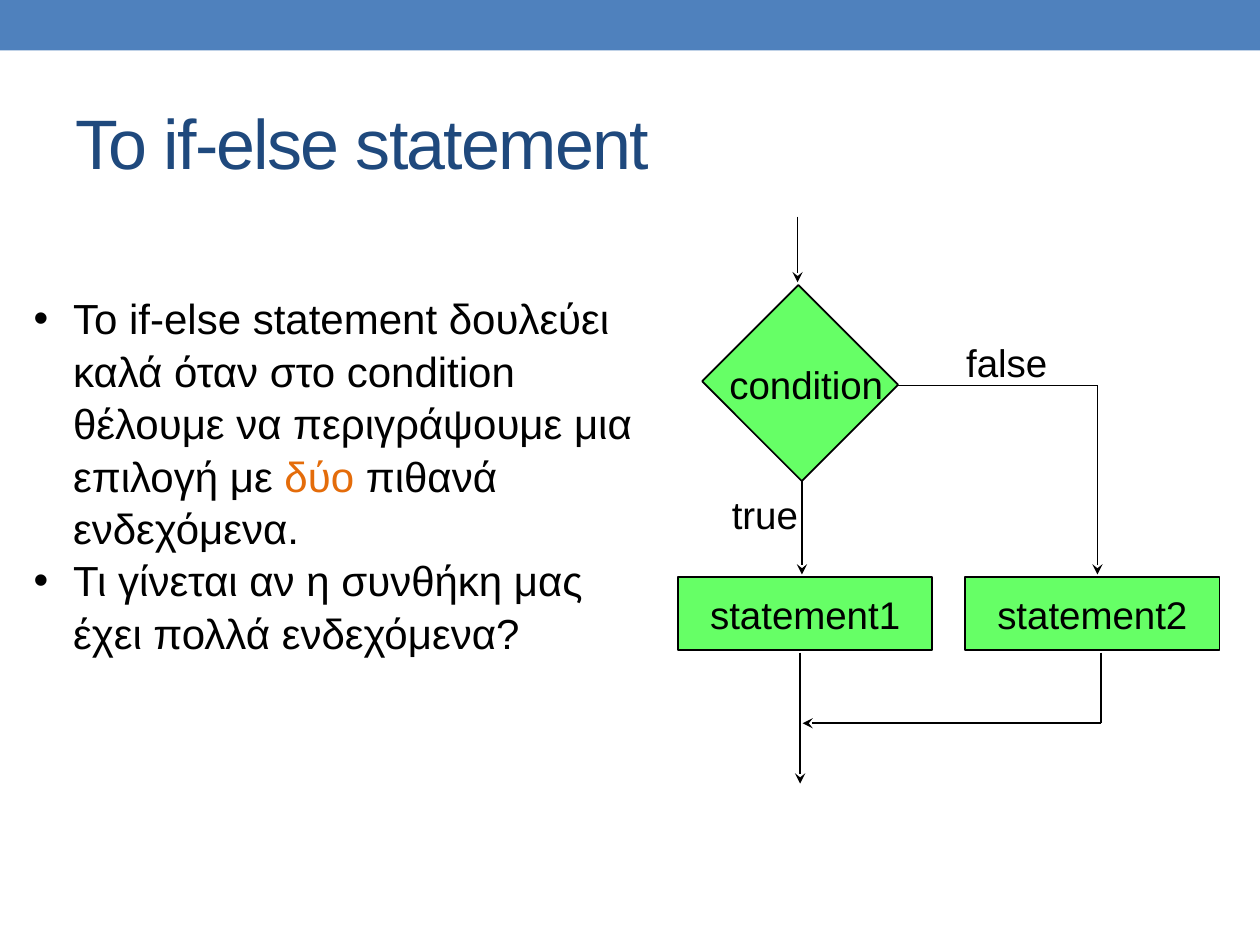
"""Build the if-else statement slide with its flowchart."""
from lxml import etree
from pptx import Presentation
from pptx.dml.color import RGBColor
from pptx.enum.shapes import MSO_CONNECTOR, MSO_SHAPE
from pptx.enum.text import MSO_ANCHOR, MSO_AUTO_SIZE, PP_ALIGN
from pptx.oxml.ns import qn
from pptx.util import Pt

RECT, STRAIGHT = MSO_SHAPE.RECTANGLE, MSO_CONNECTOR.STRAIGHT
LEFT, CENTER = PP_ALIGN.LEFT, PP_ALIGN.CENTER
TOP, MIDDLE = MSO_ANCHOR.TOP, MSO_ANCHOR.MIDDLE
FIT_SHAPE, NO_FIT = MSO_AUTO_SIZE.SHAPE_TO_FIT_TEXT, MSO_AUTO_SIZE.NONE

BLUE = RGBColor(0x4F, 0x81, 0xBD)
NAVY = RGBColor(0x1F, 0x49, 0x7D)
GREEN = RGBColor(0x66, 0xFF, 0x66)
ORANGE = RGBColor(0xE4, 0x6C, 0x0A)
BLACK = RGBColor(0, 0, 0)

TITLE = "Το if-else statement"
BULLETS = [
    [("Το if-else statement δουλεύει καλά όταν στο condition θέλουμε να "
      "περιγράψουμε μια επιλογή με ", BLACK),
     ("δύο", ORANGE), (" πιθανά ενδεχόμενα.", BLACK)],
    [("Τι γίνεται αν η συνθήκη μας έχει πολλά ενδεχόμενα?", BLACK)],
]
STATEMENTS = [("statement1", 387.4), ("statement2", 551.5)]
LABELS = [
    ("condition", 409.7, 203, 103.7),
    ("false", 545, 190, 62),
    ("true", 411.1, 277.2, 53.3),
]
LINES = [
    ((455.8, 123.8), (455.8, 161.3), True),
    ((513.4, 220.3), (627.1, 220.3), False),
    ((627.1, 220.3), (627.1, 328.3), True),
    ((458.3, 275), (458.3, 328.3), True),
    ((457.2, 373), (457.2, 447.8), True),
    ((629.3, 373), (629.3, 413.3), False),
    ((629.3, 413.3), (458.6, 413.3), True),
]


def add_run(p, text, size=22, color=BLACK):
    r = p.add_run()
    r.text = text
    r.font.name, r.font.size, r.font.color.rgb = "Arial", Pt(size), color
    return r


def add_box(s, x, y, w, h, fill=GREEN, outlined=True):
    sp = s.shapes.add_shape(RECT, Pt(x), Pt(y), Pt(w), Pt(h))
    sp.shadow.inherit = False
    sp.fill.solid()
    sp.fill.fore_color.rgb = fill
    if outlined:
        sp.line.color.rgb, sp.line.width = BLACK, Pt(1)
    else:
        sp.line.fill.background()
    return sp


def format_frame(tf, wrap=False, anchor=TOP, fit=FIT_SHAPE):
    tf.auto_size, tf.word_wrap, tf.vertical_anchor = fit, wrap, anchor
    return tf.paragraphs[0]


def add_line(s, start, end, arrow):
    c = s.shapes.add_connector(STRAIGHT, *[Pt(v) for v in start + end])
    c.line.color.rgb, c.line.width = BLACK, Pt(1)
    if arrow:
        etree.SubElement(c.line._get_or_add_ln(), qn("a:tailEnd"), type="stealth")
    etree.SubElement(c._element.spPr, qn("a:effectLst"))


def add_bullet(p, runs):
    p.line_spacing = 1.04
    pPr = p._p.get_or_add_pPr()
    pPr.set("marL", str(Pt(22.5)))
    pPr.set("indent", str(-Pt(22.5)))
    etree.SubElement(pPr, qn("a:buFont"), typeface="Arial")
    etree.SubElement(pPr, qn("a:buChar"), char="•")
    for text, color in runs:
        add_run(p, text, size=24, color=color)


def main():
    prs = Presentation()
    prs.slide_width, prs.slide_height = Pt(720), Pt(540)
    s = prs.slides.add_slide(prs.slide_layouts[5])
    add_box(s, 0, 0, 720, 28.8, fill=BLUE, outlined=False)

    title = s.shapes.title
    title.left, title.top, title.width, title.height = Pt(36), Pt(41.8), Pt(648), Pt(77.8)
    p = format_frame(title.text_frame, wrap=True, anchor=MIDDLE, fit=NO_FIT)
    p.alignment = LEFT
    r = add_run(p, TITLE, size=40, color=NAVY)
    r.font._element.set("spc", "-100")

    add_box(s, 416.9, 180, 80.6, 77.8).rotation = 45
    for text, x in STATEMENTS:
        sp = add_box(s, x, 329.8, 145.4, 41.8)
        p = format_frame(sp.text_frame, anchor=MIDDLE, fit=NO_FIT)
        p.alignment = CENTER
        add_run(p, text)
    for start, end, arrow in LINES:
        add_line(s, start, end, arrow)
    for text, x, y, w in LABELS:
        sp = s.shapes.add_textbox(Pt(x), Pt(y), Pt(w), Pt(33.8))
        add_run(format_frame(sp.text_frame), text)

    tf = s.shapes.add_textbox(Pt(12.2), Pt(162.7), Pt(365.8), Pt(211)).text_frame
    p = format_frame(tf, wrap=True)
    for i, runs in enumerate(BULLETS):
        add_bullet(tf.add_paragraph() if i else p, runs)

    prs.save("out.pptx")


if __name__ == "__main__":
    main()
